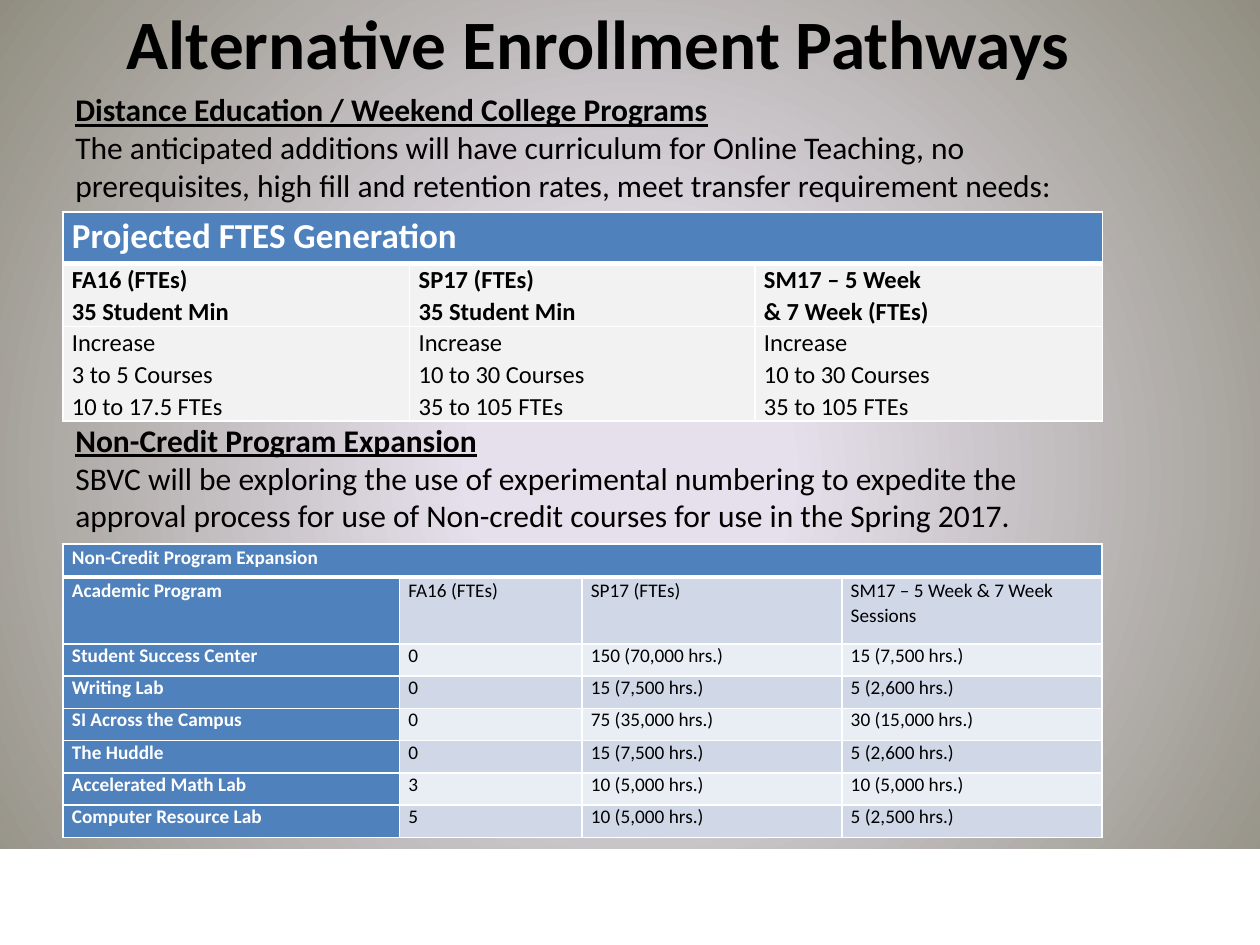
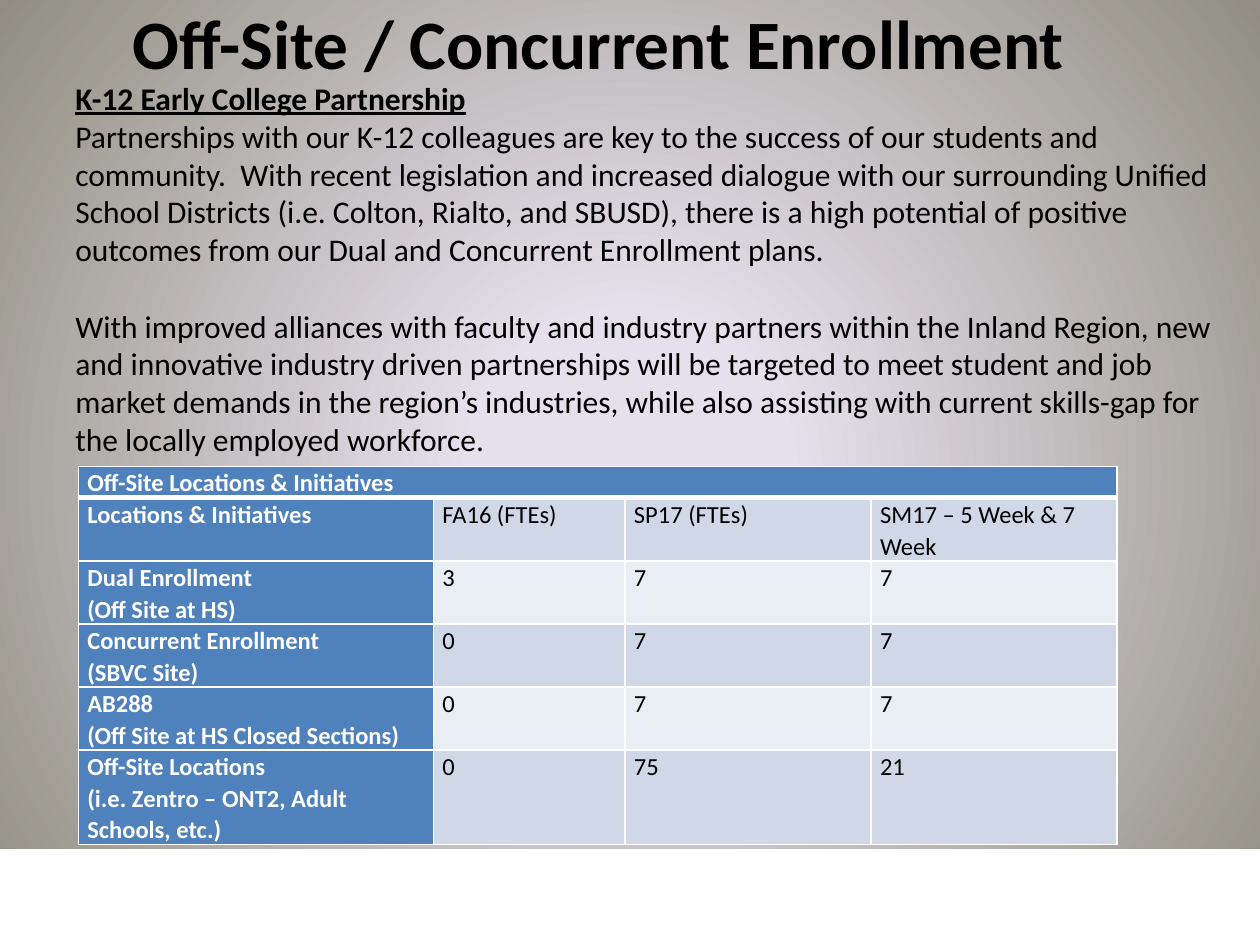
"""Build two slides on alternative and off-site enrollment, with their projection tables."""
from dataclasses import dataclass

import lxml.etree
import pptx
import pptx.dml.color
import pptx.enum.dml
import pptx.enum.shapes
import pptx.enum.text
import pptx.oxml.ns
import pptx.presentation
import pptx.slide
import pptx.table
import pptx.text.text
import pptx.util

Cm = pptx.util.Cm
Pt = pptx.util.Pt
qn = pptx.oxml.ns.qn

FONT = "Calibri"
COLORS = {
    "text": "000000",
    "white": "FFFFFF",
    "header": "4F81BD",
    "band_dark": "D0D8E8",
    "band_light": "E9EDF4",
    "plain": "F2F2F2",
    "glow": "E6E0EC",
    "edge": "918E81",
}
LEFT = 1.27
TABLE_LINE_SPACING = 1.07


@dataclass(frozen=True)
class Passage:
    """An underlined heading with body paragraphs; lengths in centimetres."""
    top: float
    width: float
    height: float
    heading: str
    paragraphs: tuple[str, ...]


@dataclass(frozen=True)
class Projection:
    """A titled table; lengths in centimetres, sizes in points."""
    left: float
    top: float
    widths: tuple[float, ...]
    heights: tuple[float, ...]
    title: str
    rows: tuple[tuple[str, ...], ...]
    title_size: float
    size: float
    labelled: bool = True
    body_spacing: float = TABLE_LINE_SPACING


@dataclass(frozen=True)
class Page:
    """The content of one slide."""
    title: str
    passages: tuple[Passage, ...]
    projections: tuple[Projection, ...]


PAGES = (
    Page(
        "Alternative Enrollment Pathways",
        (
            Passage(1.7, 20.96, 2.57, "Distance Education / Weekend College Programs", (
                "The anticipated additions will have curriculum for Online Teaching, no "
                "prerequisites, high fill and retention rates, meet transfer requirement needs:",
            )),
            Passage(8.36, 20.96, 2.57, "Non-Credit Program Expansion", (
                "SBVC will be exploring the use of experimental numbering to expedite the "
                "approval process for use of Non-credit courses for use in the Spring 2017.",
            )),
        ),
        (
            Projection(
                LEFT, 4.27, (6.99, 6.96, 7.01), (1.04, 1.27, 1.91),
                "Projected FTES Generation",
                (
                    ("FA16 (FTEs)\n35 Student Min", "SP17 (FTEs)\n35 Student Min",
                     "SM17 – 5 Week\n& 7 Week (FTEs)"),
                    ("Increase\n3 to 5 Courses\n10 to 17.5 FTEs",
                     "Increase\n10 to 30 Courses\n35 to 105 FTEs",
                     "Increase\n10 to 30 Courses\n35 to 105 FTEs"),
                ),
                title_size=20, size=14, labelled=False,
            ),
            Projection(
                LEFT, 10.97, (6.78, 3.68, 5.24, 5.24), (0.66, 1.35) + (0.65,) * 6,
                "Non-Credit Program Expansion",
                (
                    ("Academic Program", "FA16 (FTEs)", "SP17 (FTEs)",
                     "SM17 – 5 Week & 7 Week Sessions"),
                    ("Student Success Center", "0", "150 (70,000 hrs.)", "15 (7,500 hrs.)"),
                    ("Writing Lab", "0", "15 (7,500 hrs.)", "5 (2,600 hrs.)"),
                    ("SI Across the Campus", "0", "75 (35,000 hrs.)", "30 (15,000 hrs.)"),
                    ("The Huddle", "0", "15 (7,500 hrs.)", "5 (2,600 hrs.)"),
                    ("Accelerated Math Lab", "3", "10 (5,000 hrs.)", "10 (5,000 hrs.)"),
                    ("Computer Resource Lab", "5", "10 (5,000 hrs.)", "5 (2,500 hrs.)"),
                ),
                title_size=11, size=11, body_spacing=1.0,
            ),
        ),
    ),
    Page(
        "Off-Site / Concurrent Enrollment",
        (
            Passage(1.47, 24.13, 7.95, "K-12 Early College Partnership", (
                "Partnerships with our K-12 colleagues are key to the success of our students and "
                "community.  With recent legislation and increased dialogue with our surrounding "
                "Unified School Districts (i.e. Colton, Rialto, and SBUSD), there is a high "
                "potential of positive outcomes from our Dual and Concurrent Enrollment plans.",
                "With improved alliances with faculty and industry partners within the Inland "
                "Region, new and innovative industry driven partnerships will be targeted to meet "
                "student and job market demands in the region’s industries, while also assisting "
                "with current skills-gap for the locally employed workforce.",
            )),
        ),
        (
            Projection(
                1.58, 9.4, (7.16, 3.86, 4.96, 4.96), (0.62,) + (1.27,) * 4 + (1.91,),
                "Off-Site Locations & Initiatives",
                (
                    ("Locations & Initiatives", "FA16 (FTEs)", "SP17 (FTEs)",
                     "SM17 – 5 Week & 7 Week"),
                    ("Dual Enrollment\n(Off Site at HS)", "3", "7", "7"),
                    ("Concurrent Enrollment\n(SBVC Site)", "0", "7", "7"),
                    ("AB288\n(Off Site at HS Closed Sections)", "0", "7", "7"),
                    ("Off-Site Locations\n(i.e. Zentro – ONT2, Adult Schools, etc.)",
                     "0", "75", "21"),
                ),
                title_size=14, size=14,
            ),
        ),
    ),
)


def rgb(name: str) -> pptx.dml.color.RGBColor:
    """Return the named colour."""
    return pptx.dml.color.RGBColor.from_string(COLORS[name])


def add_run(paragraph: pptx.text.text._Paragraph, text: str, size: float,
            color: str = "text", bold: bool = False, underline: bool = False) -> None:
    """Append a formatted run to a paragraph."""
    run = paragraph.add_run()
    run.text = text
    run.font.name = FONT
    run.font.size = Pt(size)
    run.font.bold = bold
    run.font.underline = underline
    run.font.color.rgb = rgb(color)


def set_background(master: pptx.slide.SlideMaster) -> None:
    """Give the master a radial gradient that all slides inherit."""
    fill = master.background.fill
    fill.gradient()
    for stop, (position, color) in zip(fill.gradient_stops, ((0.2, "glow"), (1.0, "edge"))):
        stop.position = position
        stop.color.rgb = rgb(color)
    gradient = master.element.find(".//" + qn("a:gradFill"))
    linear = gradient.find(qn("a:lin"))
    circle = lxml.etree.Element(qn("a:path"), path="circle")
    lxml.etree.SubElement(circle, qn("a:fillToRect"), l="50000", t="50000", r="50000", b="50000")
    gradient.replace(linear, circle)


def add_footer_band(slide: pptx.slide.Slide) -> None:
    """Draw the white band along the foot of the slide."""
    band = slide.shapes.add_shape(
        pptx.enum.shapes.MSO_SHAPE.RECTANGLE, Cm(0), Cm(17.15), Cm(25.4), Cm(1.9))
    band.shadow.inherit = False
    band.fill.solid()
    band.fill.fore_color.rgb = rgb("white")
    band.line.color.rgb = rgb("white")
    band.line.width = Pt(2)


def set_title(slide: pptx.slide.Slide, text: str) -> None:
    """Place and format the title placeholder."""
    title = slide.shapes.title
    title.left, title.top, title.width, title.height = Cm(LEFT), Cm(0), Cm(21.59), Cm(1.7)
    frame = title.text_frame
    frame.auto_size = pptx.enum.text.MSO_AUTO_SIZE.NONE
    frame.vertical_anchor = pptx.enum.text.MSO_ANCHOR.MIDDLE
    paragraph = frame.paragraphs[0]
    paragraph.alignment = pptx.enum.text.PP_ALIGN.CENTER
    add_run(paragraph, text, 39.6, bold=True)


def add_passage(slide: pptx.slide.Slide, passage: Passage) -> None:
    """Add a heading and its paragraphs in one text box."""
    box = slide.shapes.add_textbox(
        Cm(LEFT), Cm(passage.top), Cm(passage.width), Cm(passage.height))
    frame = box.text_frame
    frame.word_wrap = True
    frame.auto_size = pptx.enum.text.MSO_AUTO_SIZE.SHAPE_TO_FIT_TEXT
    add_run(frame.paragraphs[0], passage.heading, 18, bold=True, underline=True)
    for index, text in enumerate(passage.paragraphs):
        paragraph = frame.add_paragraph()
        if index:
            paragraph.space_before = Pt(22)
        add_run(paragraph, text, 18)


def set_borders(cell: pptx.table._Cell, bottom: float = 1, top: float = 1) -> None:
    """Draw white lines on the four sides of a cell."""
    properties = cell._tc.get_or_add_tcPr()
    for side, width in (("L", 1), ("R", 1), ("T", top), ("B", bottom)):
        line = lxml.etree.SubElement(properties, qn(f"a:ln{side}"), w=str(Pt(width)))
        solid = lxml.etree.SubElement(line, qn("a:solidFill"))
        lxml.etree.SubElement(solid, qn("a:srgbClr"), val=COLORS["white"])


def fill_cell(cell: pptx.table._Cell, text: str, fill: str, size: float,
              color: str, bold: bool, spacing: float) -> None:
    """Fill a cell and write one paragraph per line of text."""
    cell.fill.solid()
    cell.fill.fore_color.rgb = rgb(fill)
    cell.margin_left = cell.margin_right = Cm(0.18)
    cell.margin_top = cell.margin_bottom = Cm(0)
    frame = cell.text_frame
    for index, line in enumerate(text.split("\n")):
        paragraph = frame.add_paragraph() if index else frame.paragraphs[0]
        paragraph.line_spacing = spacing
        add_run(paragraph, line, size, color, bold)


def add_projection(slide: pptx.slide.Slide, projection: Projection) -> None:
    """Add a table with a merged title row above its data."""
    widths, heights = projection.widths, projection.heights
    table = slide.shapes.add_table(
        len(heights), len(widths), Cm(projection.left), Cm(projection.top),
        Cm(sum(widths)), Cm(sum(heights))).table
    for column, width in zip(table.columns, widths):
        column.width = Cm(width)
    for row, height in zip(table.rows, heights):
        row.height = Cm(height)
    for row_index in range(len(heights)):
        for column_index in range(len(widths)):
            set_borders(table.cell(row_index, column_index),
                        bottom=1 if row_index else 3, top=3 if row_index == 1 else 1)

    table.cell(0, 0).merge(table.cell(0, len(widths) - 1))
    fill_cell(table.cell(0, 0), projection.title, "header", projection.title_size,
              "white", True, TABLE_LINE_SPACING)
    for row_index, values in enumerate(projection.rows):
        spacing = projection.body_spacing if row_index else TABLE_LINE_SPACING
        band = "band_light" if row_index % 2 else "band_dark"
        for column_index, value in enumerate(values):
            is_label = projection.labelled and column_index == 0
            if is_label:
                fill, color, bold = "header", "white", True
            elif projection.labelled:
                fill, color, bold = band, "text", False
            else:
                fill, color, bold = "plain", "text", row_index == 0
            fill_cell(table.cell(row_index + 1, column_index), value, fill,
                      projection.size, color, bold, spacing)


def add_page(presentation: pptx.presentation.Presentation, page: Page) -> None:
    """Add one slide with its band, title, passages and tables."""
    slide = presentation.slides.add_slide(presentation.slide_layouts[5])
    add_footer_band(slide)
    set_title(slide, page.title)
    for passage in page.passages:
        add_passage(slide, passage)
    for projection in page.projections:
        add_projection(slide, projection)


def main() -> None:
    """Build and save the presentation."""
    presentation = pptx.Presentation()
    presentation.slide_width, presentation.slide_height = Cm(25.4), Cm(19.05)
    set_background(presentation.slide_master)
    for page in PAGES:
        add_page(presentation, page)
    presentation.save("out.pptx")


if __name__ == "__main__":
    main()
